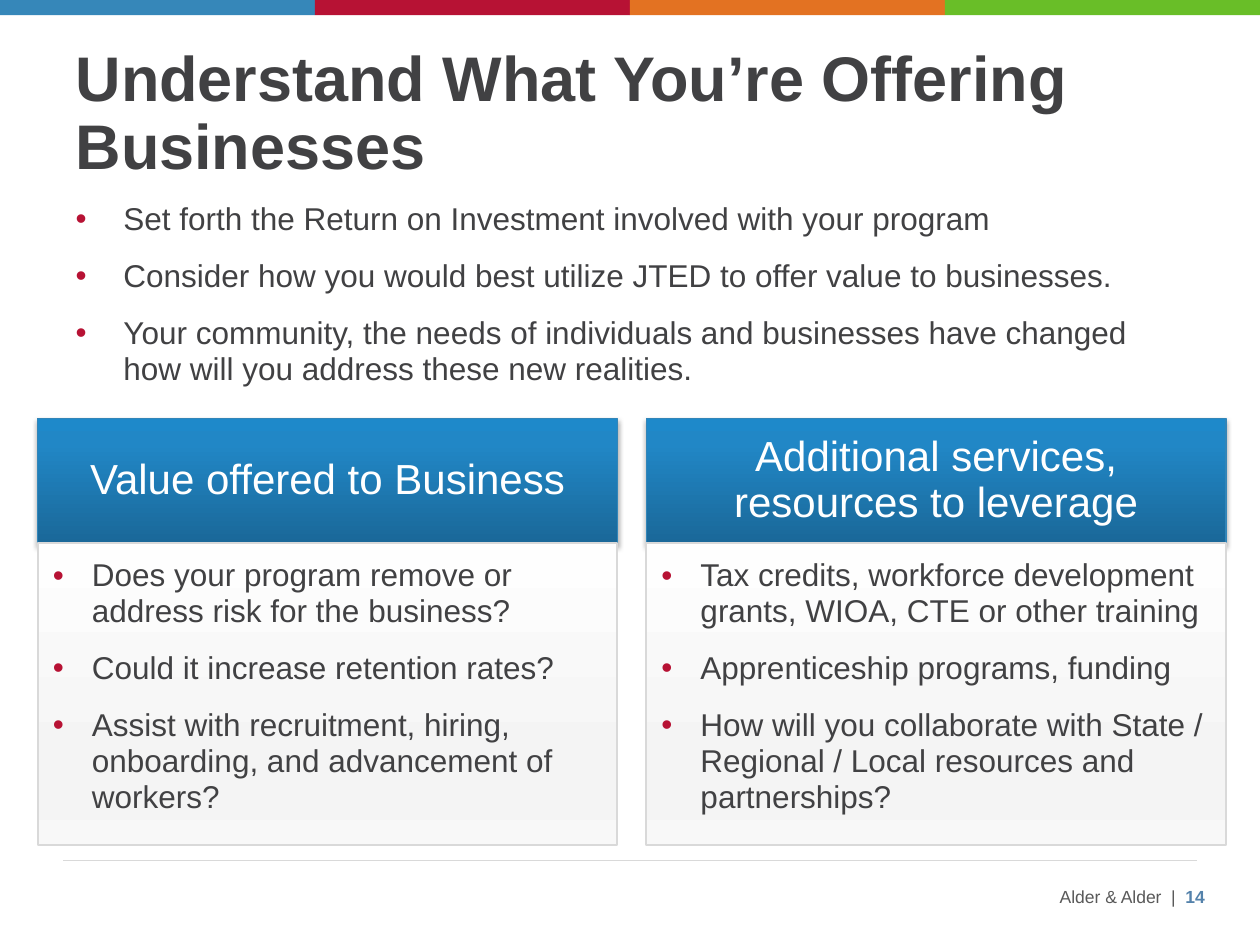
from dataclasses import dataclass

from pptx import Presentation, oxml
from pptx import util as u
from pptx.dml import color
from pptx.enum import shapes, text
from pptx.oxml import ns


@dataclass(frozen=True)
class Theme:
    font: str = "Arial"
    ink: str = "414143"
    accent: str = "B71234"
    white: str = "FFFFFF"
    footer: str = "595959"
    number: str = "5482AB"
    rule: str = "D9D9D9"
    header_line: str = "3285B8"
    bands: tuple = ("3687B9", "B71234", "E37222", "69BE28")
    header_stops: tuple = ((0, "1A6899"), (80, "2187C6"), (100, "1E89CA"))
    body_stops: tuple = ((0, "FEFEFE"), (74, "F4F4F4"), (83, "F4F4F4"), (100, "F8F8F8"))
    title_size: int = 36
    header_size: int = 24
    list_size: int = 18
    footer_size: int = 10


theme = Theme()
rgb = color.RGBColor.from_string


def write(frame, paragraphs, size, ink=theme.ink, bold=False, align=text.PP_ALIGN.LEFT,
          anchor=text.MSO_ANCHOR.TOP, spacing=1.0, before=0, indent=None, insets=None):
    """Fill a text frame; an indent in inches makes a bulleted list."""
    frame.word_wrap = True
    frame.auto_size = text.MSO_AUTO_SIZE.NONE
    frame.vertical_anchor = anchor
    if insets:
        (frame.margin_left, frame.margin_top,
         frame.margin_right, frame.margin_bottom) = map(u.Inches, insets)
    for index, words in enumerate(paragraphs):
        para = frame.add_paragraph() if index else frame.paragraphs[0]
        para.alignment = align
        para.line_spacing = spacing
        para.space_before = u.Pt(before)
        span = para.add_run()
        span.text = words
        span.font.name = theme.font
        span.font.size = u.Pt(size)
        span.font.bold = bold
        span.font.color.rgb = rgb(ink)
        if indent:
            props = para._p.get_or_add_pPr()
            props.set("marL", str(u.Inches(indent)))
            props.set("indent", str(-u.Inches(indent)))
            for tag in (f'<a:buClr {ns.nsdecls("a")}><a:srgbClr val="{theme.accent}"/></a:buClr>',
                        f'<a:buFont {ns.nsdecls("a")} typeface="{theme.font}"/>',
                        f'<a:buChar {ns.nsdecls("a")} char="•"/>'):
                props.append(oxml.parse_xml(tag))


def add_panel(page, left, top, width, height, stops, angle, line, weight):
    """Draw a rectangle with a gradient fill and a thin outline."""
    box = page.shapes.add_shape(shapes.MSO_SHAPE.RECTANGLE, *map(u.Inches, (left, top, width, height)))
    box.shadow.inherit = False
    box.line.color.rgb = rgb(line)
    box.line.width = u.Pt(weight)
    box.fill.gradient()
    marks = "".join(f'<a:gs pos="{place * 1000}"><a:srgbClr val="{shade}"/></a:gs>'
                    for place, shade in stops)
    props = box._element.spPr
    props.replace(props.find(ns.qn("a:gradFill")), oxml.parse_xml(
        f'<a:gradFill {ns.nsdecls("a")} rotWithShape="1"><a:gsLst>{marks}</a:gsLst>'
        f'<a:lin ang="{angle * 60000}" scaled="0"/></a:gradFill>'))
    return box


deck = Presentation()
deck.slide_width, deck.slide_height = u.Inches(10), u.Inches(7.5)
page = deck.slides.add_slide(deck.slide_layouts[1])

# Colour bands along the top edge
for index, shade in enumerate(theme.bands):
    band = page.shapes.add_shape(shapes.MSO_SHAPE.RECTANGLE, u.Inches(2.5 * index), 0,
                                 u.Inches(2.5), u.Inches(0.12))
    band.shadow.inherit = False
    band.fill.solid()
    band.fill.fore_color.rgb = rgb(shade)
    band.line.fill.background()

# Footer rule, name and page number
rule = page.shapes.add_connector(shapes.MSO_CONNECTOR.STRAIGHT, u.Inches(0.5), u.Inches(6.83),
                                 u.Inches(9.5), u.Inches(6.83))
rule.line.color.rgb = rgb(theme.rule)
rule.line.width = u.Pt(0.75)
rule._element.spPr.append(oxml.parse_xml(f'<a:effectLst {ns.nsdecls("a")}/>'))

footer = page.shapes.add_textbox(u.Inches(6.08), u.Inches(6.91), u.Inches(3.58), u.Inches(0.34))
write(footer.text_frame, ["Alder & Alder  |  "], theme.footer_size, theme.footer,
      align=text.PP_ALIGN.RIGHT, anchor=text.MSO_ANCHOR.BOTTOM)
number = footer.text_frame.paragraphs[0].add_run()
number.text = "14"
number.font.name = theme.font
number.font.size = u.Pt(theme.footer_size)
number.font.bold = True
number.font.color.rgb = rgb(theme.number)

# Title and opening list
title, body = page.shapes.title, page.placeholders[1]
for holder, top, height in ((title, 0.19, 1.44), (body, 1.55, 1.65)):
    holder.left, holder.top = u.Inches(0.5), u.Inches(top)
    holder.width, holder.height = u.Inches(9), u.Inches(height)
write(title.text_frame, ["Understand What You’re Offering Businesses"], theme.title_size,
      bold=True, anchor=text.MSO_ANCHOR.MIDDLE, spacing=0.9)
write(body.text_frame, [
    "Set forth the Return on Investment involved with your program",
    "Consider how you would best utilize JTED to offer value to businesses.",
    "Your community, the needs of individuals and businesses have changed "
    "how will you address these new realities.",
], theme.list_size, spacing=0.95, before=12, indent=0.38)

# Two columns, each a header above a list
columns = [
    ("Value offered to Business", [
        "Does your program remove or address risk for the business?",
        "Could it increase retention rates?",
        "Assist with recruitment, hiring, onboarding, and advancement of workers?"]),
    ("Additional services, resources to leverage", [
        "Tax credits, workforce development grants, WIOA, CTE or other training",
        "Apprenticeship programs, funding",
        "How will you collaborate with State / Regional / Local resources and partnerships?"]),
]
for index, (heading, points) in enumerate(columns):
    left = 0.3 + 4.83 * index
    header = add_panel(page, left, 3.32, 4.6, 0.99, theme.header_stops, 270, theme.header_line, 0.75)
    header._element.spPr.find(ns.qn("a:effectLst")).append(oxml.parse_xml(
        f'<a:outerShdw {ns.nsdecls("a")} blurRad="{u.Pt(3.1)}" dist="{u.Pt(1.8)}" dir="5400000" '
        'rotWithShape="0"><a:srgbClr val="000000"><a:alpha val="35000"/></a:srgbClr></a:outerShdw>'))
    write(header.text_frame, [heading], theme.header_size, theme.white,
          align=text.PP_ALIGN.CENTER, anchor=text.MSO_ANCHOR.MIDDLE, spacing=0.9,
          insets=(0.16, 0.09, 0.16, 0.09))
    details = add_panel(page, left, 4.31, 4.6, 2.4, theme.body_stops, 90, theme.rule, 1)
    write(details.text_frame, points, theme.list_size, spacing=0.95, before=12, indent=0.31,
          insets=(0.12, 0.12, 0.16, 0.17))

deck.save("out.pptx")
